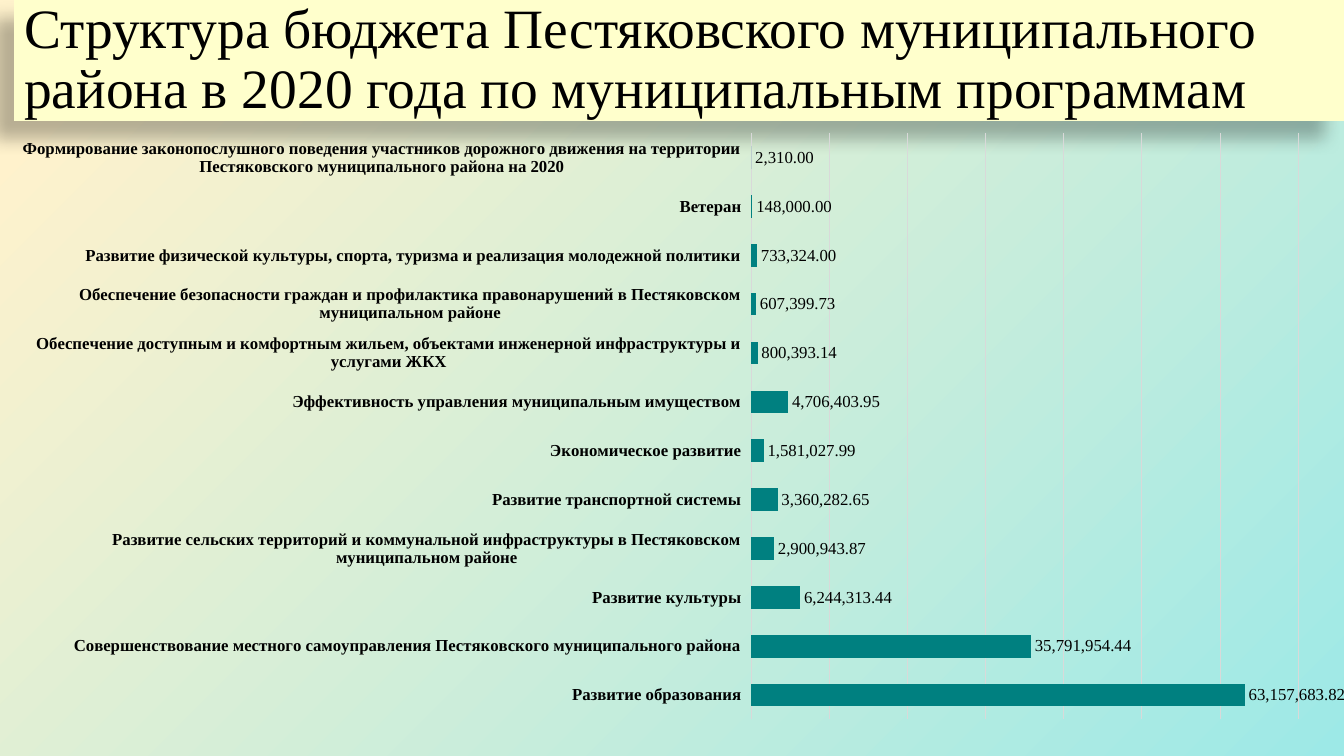
"""Builds the slide on the district budget by municipal programme."""
from dataclasses import dataclass

from pptx import Presentation
from pptx.chart.data import CategoryChartData as ChartData
from pptx.dml.color import RGBColor as Rgb
from pptx.enum.chart import XL_CHART_TYPE as Kind, XL_LABEL_POSITION as Spot
from pptx.enum.chart import XL_TICK_LABEL_POSITION as Place, XL_TICK_MARK as Tick
from pptx.enum.text import MSO_ANCHOR as Anchor, MSO_AUTO_SIZE as Fit, PP_ALIGN as Align
from pptx.oxml import parse_xml
from pptx.oxml.ns import nsdecls
from pptx.util import Pt


@dataclass(frozen=True)
class Theme:
    serif: str = "Times New Roman"
    sans: str = "Calibri"
    ink: str = "000000"
    band: str = "FFFFCC"
    bar: str = "008080"
    grid: str = "D9D9D9"
    aqua: str = "9DE9E7"
    cream: str = "FFF2CC"
    head: float = 39.6
    label: float = 12
    base: float = 10


theme = Theme()


def style(font, size, face=theme.serif, bold=False):
    font.name, font.size, font.bold = face, Pt(size), bold
    font.color.rgb = Rgb.from_string(theme.ink)


def write(frame, text, size, align=Align.LEFT, anchor=Anchor.MIDDLE, space=0.9):
    frame.word_wrap, frame.auto_size = True, Fit.NONE
    frame.vertical_anchor = anchor
    para = frame.paragraphs[0]
    para.alignment, para.line_spacing = align, space
    run = para.add_run()
    run.text = text
    style(run.font, size)


programs = [
    ("Развитие образования", 63157683.82),
    ("Совершенствование местного самоуправления Пестяковского муниципального района", 35791954.44),
    ("Развитие культуры", 6244313.44),
    ("Развитие сельских территорий и коммунальной инфраструктуры в Пестяковском муниципальном районе", 2900943.87),
    ("Развитие транспортной системы", 3360282.65),
    ("Экономическое развитие", 1581027.99),
    ("Эффективность управления муниципальным имуществом", 4706403.95),
    ("Обеспечение доступным и комфортным жильем, объектами инженерной инфраструктуры и услугами ЖКХ", 800393.14),
    ("Обеспечение безопасности граждан и профилактика правонарушений в Пестяковском муниципальном районе", 607399.73),
    ("Развитие физической культуры, спорта, туризма и реализация молодежной политики", 733324),
    ("Ветеран", 148000),
    ("Формирование законопослушного поведения участников дорожного движения на территории "
     "Пестяковского муниципального района на 2020", 2310),
]

deck = Presentation()
deck.slide_width, deck.slide_height = Pt(960), Pt(540)
slide = deck.slides.add_slide(deck.slide_layouts[5])
slide.element.cSld.insert(0, parse_xml(
    f'<p:bg {nsdecls("p", "a")}><p:bgPr><a:gradFill rotWithShape="1"><a:gsLst>'
    f'<a:gs pos="0"><a:srgbClr val="{theme.aqua}"/></a:gs>'
    f'<a:gs pos="93000"><a:srgbClr val="{theme.cream}"/></a:gs></a:gsLst>'
    '<a:path path="circle"><a:fillToRect l="100000" t="100000"/></a:path>'
    '</a:gradFill><a:effectLst/></p:bgPr></p:bg>'))

title = slide.shapes.title
title.left, title.top, title.width, title.height = Pt(10), Pt(0), Pt(950), Pt(86.4)
title.fill.solid()
title.fill.fore_color.rgb = Rgb.from_string(theme.band)
title.element.spPr.append(parse_xml(
    f'<a:effectLst {nsdecls("a")}><a:outerShdw blurRad="{Pt(11.8)}" dist="{Pt(19.7)}" '
    f'dir="{141 * 60000}" algn="ctr" rotWithShape="0"><a:srgbClr val="{theme.ink}">'
    '<a:alpha val="28000"/></a:srgbClr></a:outerShdw></a:effectLst>'))
write(title.text_frame,
      "Структура бюджета Пестяковского муниципального района в 2020 года по муниципальным программам",
      size=theme.head)

money = "#,##0.00"
data = ChartData(number_format=money)
data.categories = [name for name, cost in programs]
data.add_series("Series 1", [cost for name, cost in programs])
chart = slide.shapes.add_chart(Kind.BAR_CLUSTERED, Pt(10), Pt(86.4), Pt(951), Pt(436.3), data).chart
chart.has_legend = chart.has_title = False
style(chart.font, theme.base, face=theme.sans)

names = chart.category_axis
names.major_tick_mark = names.minor_tick_mark = Tick.NONE
names.tick_label_position = Place.LOW
names.format.line.width = Pt(1)
names.format.line.color.rgb = Rgb.from_string(theme.grid)
style(names.tick_labels.font, theme.label, bold=True)

costs = chart.value_axis
costs.visible = False
costs.minimum_scale, costs.maximum_scale, costs.major_unit = 0, 70000000, 10000000
costs.tick_labels.number_format = money
costs.tick_labels.number_format_is_linked = False
costs.has_major_gridlines = True
costs.major_gridlines.format.line.width = Pt(0.75)
costs.major_gridlines.format.line.color.rgb = Rgb.from_string(theme.grid)

plot = chart.plots[0]
plot.gap_width, plot.overlap, plot.vary_by_categories = 115, -20, False
bars = plot.series[0]
bars.format.fill.solid()
bars.format.fill.fore_color.rgb = Rgb.from_string(theme.bar)
labels = bars.data_labels
labels.show_value, labels.position = True, Spot.OUTSIDE_END
labels.number_format, labels.number_format_is_linked = money, False
style(labels.font, theme.label)

area = chart.element.chart.plotArea
for old in area.xpath("c:layout"):
    area.remove(old)
area.insert(0, parse_xml(
    f'<c:layout {nsdecls("c")}><c:manualLayout><c:layoutTarget val="inner"/>'
    '<c:xMode val="edge"/><c:yMode val="edge"/><c:x val="0.554"/><c:y val="0.02"/>'
    '<c:w val="0.411"/><c:h val="0.96"/></c:manualLayout></c:layout>'))

deck.save("out.pptx")
